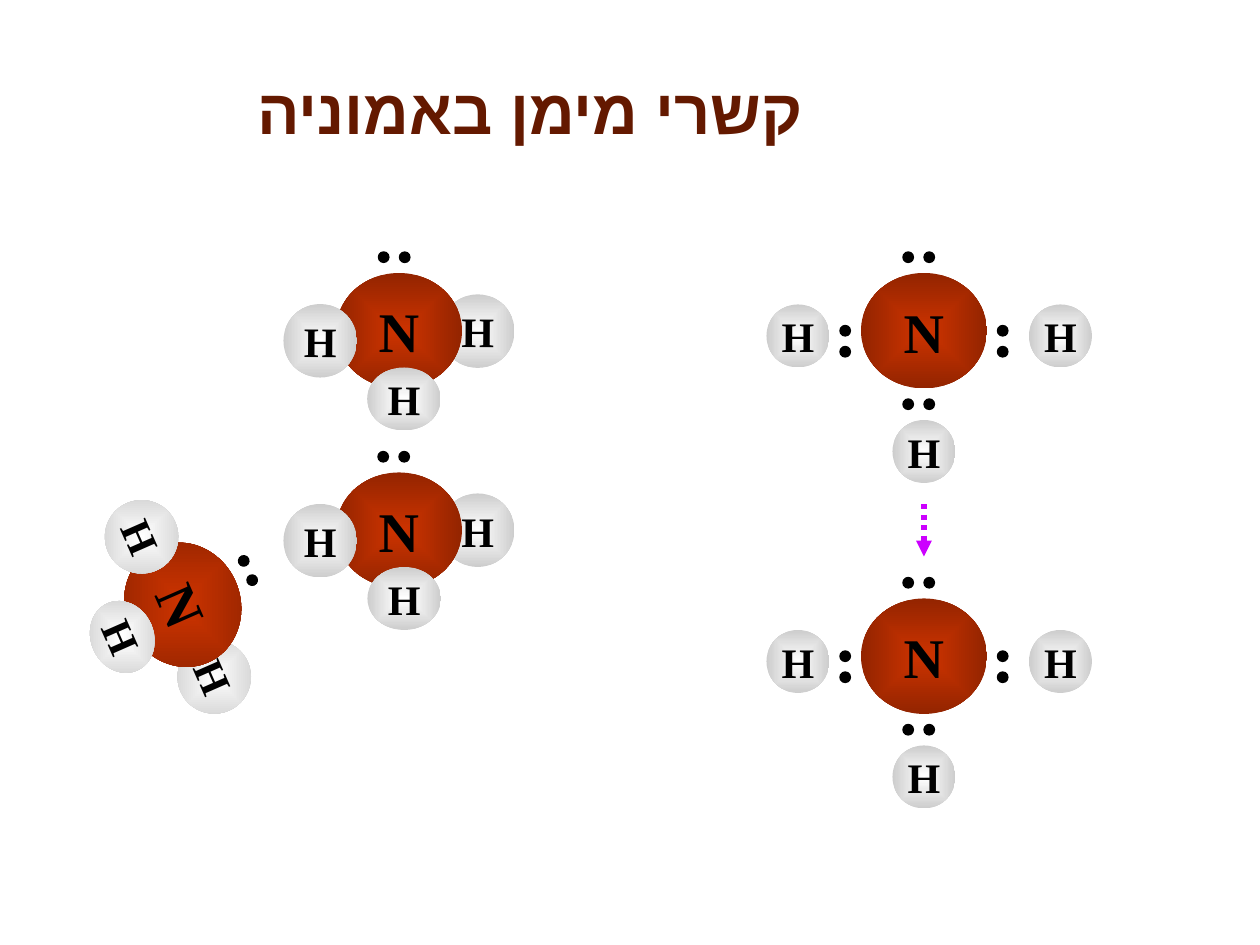
from pptx import Presentation
from pptx.dml.color import RGBColor
from pptx.enum.dml import MSO_LINE
from pptx.enum.shapes import MSO_CONNECTOR, MSO_SHAPE
from pptx.enum.text import MSO_ANCHOR, PP_ALIGN
from pptx.oxml import parse_xml
from pptx.oxml.ns import nsdecls, qn
from pptx.oxml.xmlchemy import OxmlElement
from pptx.util import Pt

LINEAR = '<a:lin ang="5400000" scaled="1"/>'
CENTRE = ('<a:path path="shape"><a:fillToRect l="50000" t="50000" '
          'r="50000" b="50000"/></a:path>')


def paint(code):
    """Turn a hex string into a colour."""
    return RGBColor.from_string(code)


def blend(code, stops, kind):
    """Return a gradient of one colour with (place, shade) stops."""
    marks = "".join(
        f'<a:gs pos="{place * 1000}"><a:srgbClr val="{code}">'
        f'<a:shade val="{shade}"/></a:srgbClr></a:gs>'
        for place, shade in stops)
    return parse_xml(f'<a:gradFill {nsdecls("a")} rotWithShape="1">'
                     f'<a:gsLst>{marks}</a:gsLst>{kind}</a:gradFill>')


def write(shape, text, size, font, color="000000"):
    """Put bold, centred, right-to-left text in a shape and return its run."""
    frame = shape.text_frame
    frame.word_wrap = False
    frame.vertical_anchor = MSO_ANCHOR.MIDDLE
    para = frame.paragraphs[0]
    para.alignment = PP_ALIGN.CENTER
    para._p.get_or_add_pPr().set("rtl", "1")
    run = para.add_run()
    run.text = text
    run.font.size = Pt(size)
    run.font.bold = True
    run.font.name = font
    run.font.color.rgb = paint(color)
    script = OxmlElement("a:cs")
    script.set("typeface", font)
    run.font._element.append(script)
    return run


class Board:
    """Holds the style and the current slide."""

    ink = "000000"
    head = "Arial"
    body = "Times New Roman"
    atoms = {"N": ("CC3300", 47500, 32), "H": ("FFFFFF", 61000, 24)}

    def __init__(self, deck):
        """Add a title-only slide."""
        self.slide = deck.slides.add_slide(deck.slide_layouts[5])

    def title(self, text, left, top, width, height):
        """Fill the title with outlined gradient text."""
        title = self.slide.shapes.title
        title.left, title.top = Pt(left), Pt(top)
        title.width, title.height = Pt(width), Pt(height)
        font = write(title, text, 36, self.head).font
        props = font._element
        tone = blend("CC3300", [(0, 100000), (50, 19600), (100, 100000)], LINEAR)
        props.replace(props.find(qn("a:solidFill")), tone)
        props.insert(0, parse_xml(
            f'<a:ln {nsdecls("a")} w="9525"><a:solidFill>'
            f'<a:srgbClr val="{self.ink}"/></a:solidFill></a:ln>'))

    def oval(self, group, left, top, width, height):
        """Add a plain ellipse to a group."""
        shape = group.shapes.add_shape(
            MSO_SHAPE.OVAL, Pt(left), Pt(top), Pt(width), Pt(height))
        shape.shadow.inherit = False
        return shape

    def atom(self, group, name, left, top, width, height):
        """Add a shaded atom with its symbol."""
        color, shade, size = self.atoms[name]
        shape = self.oval(group, left, top, width, height)
        shape.fill.background()
        shape.line.fill.background()
        props = shape._element.spPr
        tone = blend(color, [(0, 100000), (100, shade)], CENTRE)
        props.replace(props.find(qn("a:noFill")), tone)
        write(shape, name, size, self.body, self.ink)

    def pair(self, group, left, top, across=True):
        """Add two electron dots side by side or stacked."""
        for step in (0, 12):
            dot = self.oval(group, left + step * across,
                            top + step * (not across), 6, 6)
            dot.fill.solid()
            dot.fill.fore_color.rgb = paint(self.ink)
            dot.line.color.rgb = paint(self.ink)
            dot.line.width = Pt(0.75)

    def lewis(self, left, top):
        """Draw the flat ammonia with all its electron pairs."""
        group = self.slide.shapes.add_group_shape()
        self.atom(group, "N", left + 54, top + 12, 72, 66)
        for right, down in ((150, 30), (72, 96), (0, 30)):
            self.atom(group, "H", left + right, top + down, 36, 36)
        for right, down, across in (
                (42, 42, False), (132, 42, False), (78, 84, True), (78, 0, True)):
            self.pair(group, left + right, top + down, across)

    def model(self, left, top, turn=0):
        """Draw the solid ammonia with its free pair, turned by degrees."""
        group = self.slide.shapes.add_group_shape()
        for name, right, down, width, height in (
                ("H", 90, 24, 42, 42), ("N", 30, 12, 72, 66),
                ("H", 48, 66, 42, 36), ("H", 0, 30, 42, 42)):
            self.atom(group, name, left + right, top + down, width, height)
        self.pair(group, left + 54, top)
        group.rotation = turn

    def arrow(self, left, top, end, color):
        """Draw a dotted arrow pointing down."""
        line = self.slide.shapes.add_connector(
            MSO_CONNECTOR.STRAIGHT, Pt(left), Pt(top), Pt(left), Pt(end))
        line.line.color.rgb = paint(color)
        line.line.width = Pt(3)
        line.line.dash_style = MSO_LINE.ROUND_DOT
        tail = OxmlElement("a:tailEnd")
        tail.set("type", "triangle")
        line.line._get_or_add_ln().append(tail)
        line._element.spPr.append(OxmlElement("a:effectLst"))


def main():
    """Build the ammonia slide."""
    deck = Presentation()
    deck.slide_width, deck.slide_height = Pt(720), Pt(540)
    board = Board(deck)
    board.title("קשרי מימן באמוניה", 138, 36, 330, 53)
    for top in (144, 330):
        board.lewis(438, top)
    board.model(162, 258)
    board.arrow(528, 288, 318, "CC00FF")
    board.model(162, 144, 0.3)
    board.model(32.9, 297, 66.4)
    deck.save("out.pptx")


if __name__ == "__main__":
    main()
